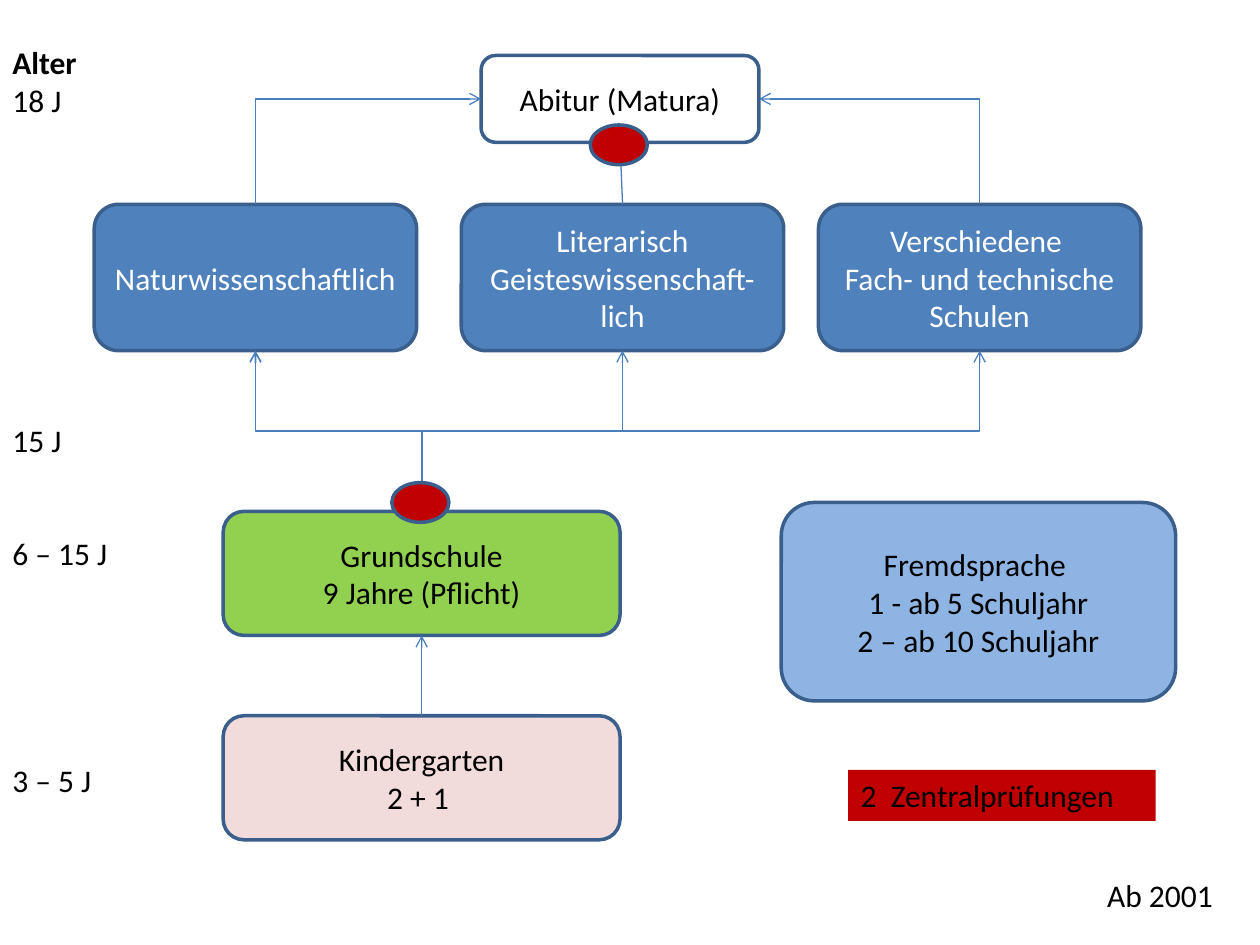
from lxml.etree import SubElement
from pptx import Presentation
from pptx.dml.color import RGBColor
from pptx.enum.shapes import MSO_CONNECTOR as Link, MSO_SHAPE as Form
from pptx.enum.text import MSO_ANCHOR as Anchor, PP_ALIGN as Align
from pptx.oxml.ns import qn
from pptx.util import Cm, Pt

HUES = {
    "black": "000000", "white": "FFFFFF", "edge": "3A5F8C", "wire": "4B7EBC",
    "blue": "4F81BD", "sky": "8EB4E3", "green": "92D050", "rose": "F2DCDB",
    "red": "C00000",
}
PITCH = 21.6
WIDE, LOW = (8, 2.5), (6.5, 2.95)
ROW = 4.12

BOXES = {
    "kinder": ((4.5, 14.43), WIDE, "rose", "black", ["Kindergarten", "2 + 1 "]),
    "grund": ((4.5, 10.31), WIDE, "green", "black",
              ["Grundschule", "9 Jahre (Pflicht)"]),
    "fremd": ((15.75, 10.13), (7.95, 4), "sky", "black",
              ["Fremdsprache ", "1 - ab 5 Schuljahr", "2 – ab 10 Schuljahr"]),
    "natur": ((1.9, ROW), LOW, "blue", "white", ["Naturwissenschaftlich"]),
    "liter": ((9.3, ROW), LOW, "blue", "white",
              ["Literarisch Geisteswissenschaft-lich"]),
    "fach": ((16.5, ROW), LOW, "blue", "white",
             ["Verschiedene ", "Fach- und technische Schulen"]),
    "abitur": ((9.7, 1.12), (5.6, 1.75), "white", "black", ["Abitur (Matura)"]),
}
LINKS = [
    ("grund", 0, "natur", 2, "bentConnector3", 1),
    ("grund", 0, "liter", 2, "bentConnector3", 0.75),
    ("grund", 0, "fach", 2, "bentConnector3", 0.75),
    ("kinder", 0, "grund", 2, None, 0.75),
    ("natur", 0, "abitur", 1, "bentConnector2", 0.75),
    ("fach", 0, "abitur", 3, "bentConnector2", 0.75),
    ("liter", 0, "abitur", 2, None, 0.75),
]
AGES = [("Alter", 0), ("18 J", 0), ("15 J", 8), ("6 – 15 J", 2), ("3 – 5 J", 5)]
DOTS = [(7.9, 9.73), (11.9, 2.52)]


def hue(name):
    """Return the named colour."""
    return RGBColor.from_string(HUES[name])


def write(frame, lines, color="black", align=Align.LEFT, anchor=Anchor.TOP,
          gaps=(), bold=()):
    """Fill a text frame, one paragraph a line."""
    frame.word_wrap = True
    frame.vertical_anchor = anchor
    for i, line in enumerate(lines):
        para = frame.paragraphs[0] if i == 0 else frame.add_paragraph()
        para.alignment = align
        if gaps and gaps[i]:
            para.space_before = Pt(gaps[i] * PITCH)
        run = para.add_run()
        run.text = line
        run.font.name, run.font.size = "Calibri", Pt(18)
        run.font.bold = i in bold
        run.font.color.rgb = hue(color)


def draw(slide, form, spot, size, fill, edge=True):
    """Add a filled shape."""
    shape = slide.shapes.add_shape(form, *map(Cm, spot + size))
    shape.shadow.inherit = False
    shape.fill.solid()
    shape.fill.fore_color.rgb = hue(fill)
    if edge:
        shape.line.color.rgb, shape.line.width = hue("edge"), Pt(2)
    else:
        shape.line.fill.background()
    return shape


def bend(wire, prst):
    """Turn an elbow so that it leaves upwards."""
    x, y, u, v = wire.begin_x, wire.begin_y, wire.end_x, wire.end_y
    wide, high = abs(v - y), abs(u - x)
    wire.left, wire.top = (x + u - wide) // 2, (y + v - high) // 2
    wire.width, wire.height = wide, high
    props = wire._element.spPr
    frame = props.find(qn("a:xfrm"))
    right = u > x
    frame.set("rot", str((90 if right else 270) * 60000))
    frame.set("flipH", "1" if right else "0")
    frame.set("flipV", "1")
    props.find(qn("a:prstGeom")).set("prst", prst)


def join(slide, start, out, end, into, prst, width):
    """Link two boxes with an arrow."""
    kind = Link.ELBOW if prst else Link.STRAIGHT
    wire = slide.shapes.add_connector(kind, 0, 0, 0, 0)
    wire.begin_connect(start, out)
    wire.end_connect(end, into)
    if prst:
        bend(wire, prst)
    wire.line.color.rgb, wire.line.width = hue("wire"), Pt(width)
    SubElement(wire.line._get_or_add_ln(), qn("a:tailEnd"), type="arrow")
    SubElement(wire._element.spPr, qn("a:effectLst"))


def main():
    """Build the school system slide."""
    deck = Presentation()
    deck.slide_width, deck.slide_height = Cm(25.4), Cm(19.05)
    slide = deck.slides.add_slide(deck.slide_layouts[6])

    made = {}
    for name, (spot, size, fill, color, lines) in BOXES.items():
        made[name] = draw(slide, Form.ROUNDED_RECTANGLE, spot, size, fill)
        write(made[name].text_frame, lines, color=color, align=Align.CENTER,
              anchor=Anchor.MIDDLE)
    for start, out, end, into, prst, width in LINKS:
        join(slide, made[start], out, made[end], into, prst, width)

    date = slide.shapes.add_textbox(*map(Cm, (18.7, 17.53, 6, 1.03)))
    write(date.text_frame, ["Ab 2001"], align=Align.RIGHT)
    exam = draw(slide, Form.RECTANGLE, (17.1, 15.52), (6.2, 1.03), "red", edge=False)
    write(exam.text_frame, ["2  Zentralprüfungen"])
    ages = slide.shapes.add_textbox(*map(Cm, (0, 0.74, 3.9, 15.65)))
    lines, gaps = zip(*AGES)
    write(ages.text_frame, lines, gaps=gaps, bold=(0,))
    for spot in DOTS:
        draw(slide, Form.OVAL, spot, (1.15, 0.8), "red")
    deck.save("out.pptx")


if __name__ == "__main__":
    main()
